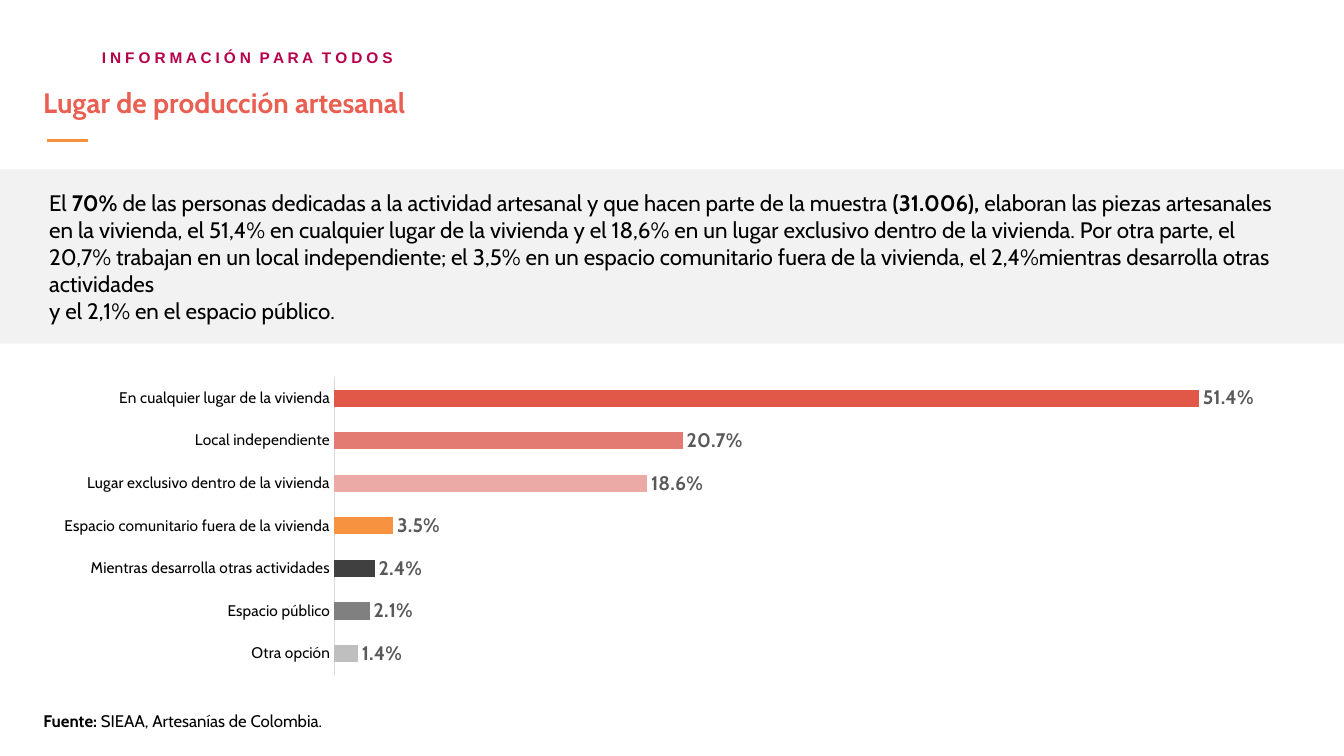
from dataclasses import dataclass

from lxml import etree
from pptx import Presentation
from pptx.chart.data import CategoryChartData
from pptx.dml.color import RGBColor
from pptx.enum import chart as charts, shapes, text
from pptx.oxml import ns
from pptx.util import Pt


@dataclass(frozen=True)
class Theme:
    sans: str = "Cabin"
    header_font: str = "Arial"
    black: str = "000000"
    magenta: str = "B6004C"
    coral: str = "E96052"
    orange: str = "F69240"
    band: str = "F2F2F2"
    axis: str = "D9D9D9"
    label: str = "595959"
    header_size: int = 11
    title_size: int = 20
    body_size: int = 16
    source_size: int = 12
    category_size: int = 11
    value_size: int = 14


THEME = Theme()

# Bars from bottom to top: category, share, colour
PLACES = [
    ("Otra opción", 0.014, "BFBFBF"),
    ("Espacio público", 0.021, "808080"),
    ("Mientras desarrolla otras actividades", 0.024, "404040"),
    ("Espacio comunitario fuera de la vivienda", 0.035, THEME.orange),
    ("Lugar exclusivo dentro de la vivienda", 0.186, "EBAAA6"),
    ("Local independiente", 0.207, "E47B72"),
    ("En cualquier lugar de la vivienda", 0.514, "E15748"),
]

# Paragraphs as lists of (words, bold)
SUMMARY = [
    [
        ("El ", False),
        ("70% ", True),
        ("de las personas dedicadas a la actividad artesanal y que hacen parte "
         "de la muestra ", False),
        ("(31.006), ", True),
        ("elaboran las piezas artesanales en la vivienda, el 51,4% en cualquier "
         "lugar de la vivienda y el 18,6% en un lugar exclusivo dentro de la "
         "vivienda. Por otra parte, el 20,7% trabajan en un local independiente; "
         "el 3,5% en un espacio comunitario fuera de la vivienda, el "
         "2,4%mientras desarrolla otras actividades", False),
    ],
    [("y el 2,1% en el espacio público.", False)],
]


def rgb(color):
    return RGBColor.from_string(color)


def style_font(font, size, color, bold=False, name=THEME.sans):
    font.name = name
    font.size = Pt(size)
    font.bold = bold
    font.color.rgb = rgb(color)


def add_text(slide, box, paragraphs, size, color, name=THEME.sans,
             insets=(7.2, 3.6, 7.2, 3.6)):
    """Add a text box whose paragraphs are lists of (words, bold)."""
    frame = slide.shapes.add_textbox(*map(Pt, box)).text_frame
    frame.word_wrap = True
    frame.auto_size = text.MSO_AUTO_SIZE.SHAPE_TO_FIT_TEXT
    (frame.margin_left, frame.margin_top,
     frame.margin_right, frame.margin_bottom) = map(Pt, insets)
    for index, runs in enumerate(paragraphs):
        paragraph = frame.add_paragraph() if index else frame.paragraphs[0]
        for words, bold in runs:
            run = paragraph.add_run()
            run.text = words
            style_font(run.font, size, color, bold, name)
    return frame


def add_header(slide, box, words):
    """Add spaced capitals, with wider gaps between the words."""
    runs = []
    for word in words.split():
        runs += [(" ", True), (" ".join(word), True)]
    frame = add_text(slide, box, [runs[1:]], THEME.header_size, THEME.magenta,
                     THEME.header_font, insets=(1.4, 1.4, 0, 0))
    paragraph = frame.paragraphs[0]
    paragraph.line_spacing = 1.3
    for run in paragraph.runs:
        spacing = "300" if run.text == " " else "-10"
        run.font._element.set("spc", spacing)


def add_band(slide, box, color):
    band = slide.shapes.add_shape(shapes.MSO_SHAPE.RECTANGLE, *map(Pt, box))
    band.shadow.inherit = False
    band.fill.solid()
    band.fill.fore_color.rgb = rgb(color)
    band.line.fill.background()


def add_rule(slide, left, top, width, color):
    rule = slide.shapes.add_connector(
        shapes.MSO_CONNECTOR.STRAIGHT, Pt(left), Pt(top), Pt(left + width), Pt(top))
    rule.line.color.rgb = rgb(color)
    rule.line.width = Pt(2.25)
    etree.SubElement(rule._element.spPr, ns.qn("a:effectLst"))


def set_plot_area(chart, left, top, width, height):
    """Fix the inner plot area, as fractions of the chart."""
    plot_area = chart._chartSpace.chart.plotArea
    for old in plot_area.findall(ns.qn("c:layout")):
        plot_area.remove(old)
    layout = etree.Element(ns.qn("c:layout"))
    manual = etree.SubElement(layout, ns.qn("c:manualLayout"))
    settings = [("layoutTarget", "inner"), ("xMode", "edge"), ("yMode", "edge"),
                ("x", left), ("y", top), ("w", width), ("h", height)]
    for tag, value in settings:
        etree.SubElement(manual, ns.qn(f"c:{tag}")).set("val", str(value))
    plot_area.insert(0, layout)


def add_bar_chart(slide, box, places):
    data = CategoryChartData(number_format="0.0%")
    data.categories = [name for name, share, color in places]
    data.add_series("Series 1", [share for name, share, color in places])
    chart = slide.shapes.add_chart(
        charts.XL_CHART_TYPE.BAR_CLUSTERED, *map(Pt, box), data).chart
    chart.has_legend = False
    chart.has_title = False
    style_font(chart.font, THEME.category_size, THEME.black)
    set_plot_area(chart, 0.219, 0.054, 0.781, 0.891)

    # Axes
    category_axis = chart.category_axis
    category_axis.major_tick_mark = charts.XL_TICK_MARK.NONE
    category_axis.format.line.color.rgb = rgb(THEME.axis)
    category_axis.format.line.width = Pt(0.75)
    value_axis = chart.value_axis
    value_axis.minimum_scale = 0
    value_axis.maximum_scale = 0.6
    value_axis.has_major_gridlines = False
    value_axis.visible = False

    # Bars and their values
    plot = chart.plots[0]
    plot.vary_by_categories = False
    plot.gap_width = 150
    plot.overlap = -25
    for index, (name, share, color) in enumerate(places):
        fill = plot.series[0].points[index].format.fill
        fill.solid()
        fill.fore_color.rgb = rgb(color)
    plot.has_data_labels = True
    labels = plot.data_labels
    labels.show_value = True
    labels.number_format = "0.0%"
    labels.number_format_is_linked = False
    labels.position = charts.XL_LABEL_POSITION.OUTSIDE_END
    style_font(labels.font, THEME.value_size, THEME.label, bold=True)


def main():
    presentation = Presentation()
    presentation.slide_width = Pt(960)
    presentation.slide_height = Pt(540)
    slide = presentation.slides.add_slide(presentation.slide_layouts[6])

    # Heading
    add_header(slide, (71.3, 28.8, 295, 18), "INFORMACIÓN PARA TODOS")
    add_text(slide, (23.8, 57.6, 302, 31.5),
             [[("Lugar de producción artesanal", True)]],
             THEME.title_size, THEME.coral)
    add_rule(slide, 33.8, 100.5, 28.8, THEME.orange)

    # Summary on its band
    add_band(slide, (0, 121, 960, 124.5), THEME.band)
    add_text(slide, (28, 131.8, 890, 104.4), SUMMARY, THEME.body_size, THEME.black)

    # Chart and source
    add_bar_chart(slide, (36.7, 256.3, 923, 239), PLACES)
    add_text(slide, (21.6, 502.5, 474, 24.5),
             [[("Fuente: ", True), ("SIEAA, Artesanías de Colombia.", False)]],
             THEME.source_size, THEME.black, insets=(9.4, 5, 9.4, 5))

    presentation.save("out.pptx")


if __name__ == "__main__":
    main()
